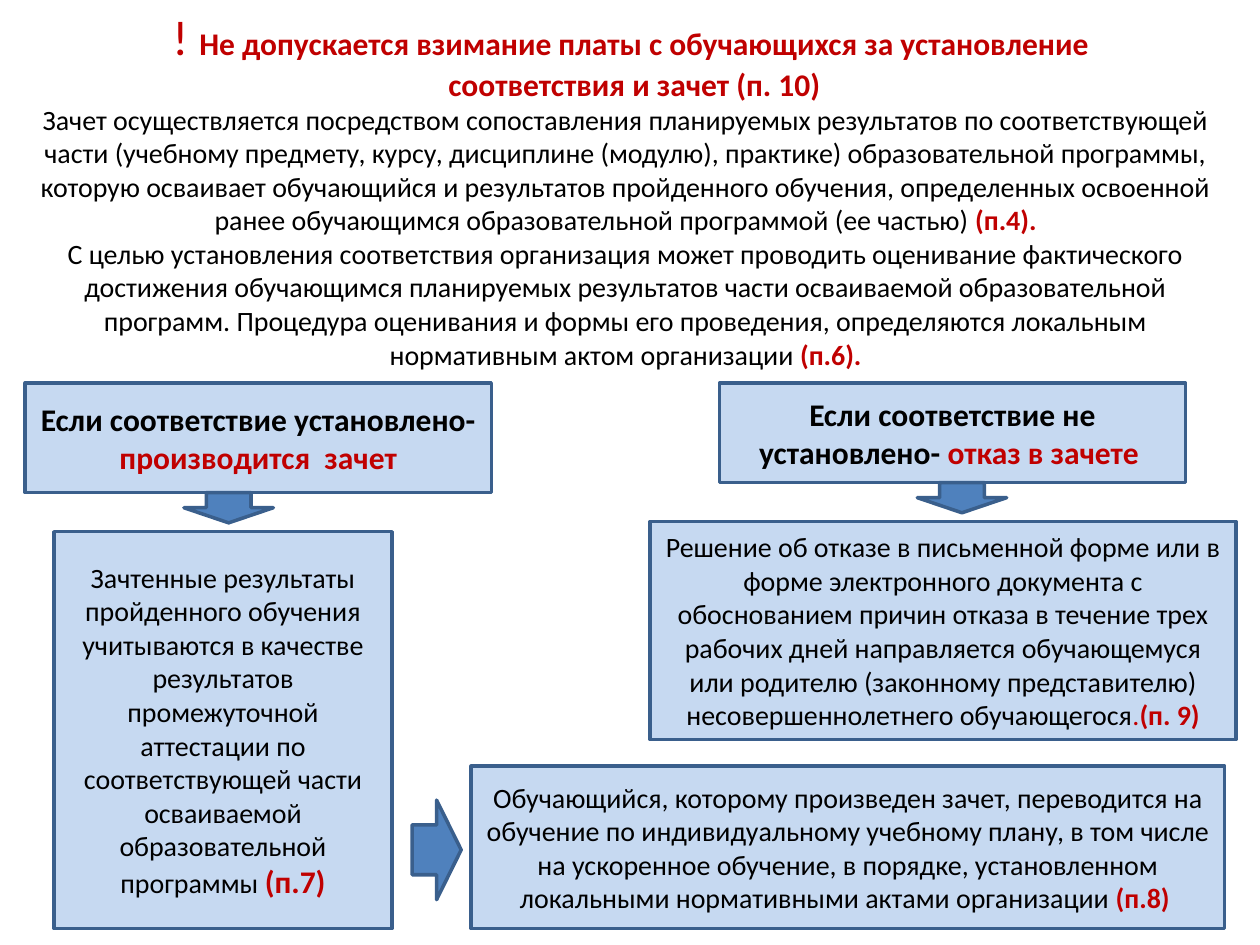
from pptx import Presentation
from pptx.dml.color import RGBColor
from pptx.enum.shapes import MSO_SHAPE as Preset
from pptx.enum.text import MSO_ANCHOR as Anchor, MSO_AUTO_SIZE as AutoSize, PP_ALIGN as Align
from pptx.oxml.ns import qn
from pptx.util import Inches, Pt
from lxml.etree import SubElement

BLACK, RED = "000000", "C00000"
PALE_BLUE, BLUE, OUTLINE = "C6D9F1", "4F81BD", "3A5F8C"
NORMAL = {"size": Pt(16), "bold": False, "color": BLACK}
NORMAL_RED = {**NORMAL, "color": RED}
CLAUSE = {**NORMAL_RED, "bold": True}
HEAD = {"size": Pt(18), "bold": True, "color": BLACK}
HEAD_RED = {**HEAD, "color": RED}
MARK = {"size": Pt(28), "bold": False, "color": RED}

WARNING = [
    [("! ", MARK), ("Не допускается взимание платы с обучающихся за установление ", HEAD_RED)],
    [("соответствия и зачет (п. 10)", HEAD_RED)],
]
PROCEDURE = [
    [("Зачет осуществляется посредством сопоставления планируемых результатов по "
      "соответствующей части (учебному предмету, курсу, дисциплине (модулю), практике) "
      "образовательной программы, которую осваивает обучающийся и результатов пройденного "
      "обучения, определенных освоенной ранее обучающимся образовательной программой "
      "(ее частью) ", NORMAL), ("(п.4).", CLAUSE)],
    [("С целью установления соответствия организация может проводить оценивание "
      "фактического достижения обучающимся планируемых результатов части осваиваемой "
      "образовательной программ. Процедура оценивания и формы его проведения, определяются "
      "локальным нормативным актом организации ", NORMAL), ("(п.6).", CLAUSE)],
]
BOXES = [
    ((0.2, 3.04, 3.7, 0.87),
     [("Если соответствие установлено- ", HEAD), ("производится  зачет", HEAD_RED)]),
    ((5.71, 3.04, 3.7, 0.79),
     [("Если соответствие не установлено- ", HEAD), ("отказ в зачете ", HEAD_RED)]),
    ((0.43, 4.22, 2.68, 3.15),
     [("Зачтенные результаты пройденного обучения учитываются в качестве результатов "
       "промежуточной аттестации по соответствующей части осваиваемой образовательной "
       "программы ", NORMAL), ("(п.7)", HEAD_RED)]),
    ((5.16, 4.14, 4.65, 1.73),
     [("Решение об отказе в письменной форме или в форме электронного документа с "
       "обоснованием причин отказа в течение трех рабочих дней направляется обучающемуся "
       "или родителю (законному представителю) несовершеннолетнего обучающегося", NORMAL),
      (".", NORMAL_RED), ("(п. 9)", CLAUSE)]),
    ((3.74, 6.08, 5.98, 1.29),
     [("Обучающийся, которому произведен зачет, переводится на обучение по индивидуальному "
       "учебному плану, в том числе на ускоренное обучение, в порядке, установленном "
       "локальными нормативными актами организации ", NORMAL), ("(п.8) ", CLAUSE)]),
]
ARROWS = [
    (Preset.DOWN_ARROW, (1.46, 3.91, 0.71, 0.24)),
    (Preset.DOWN_ARROW, (7.28, 3.83, 0.71, 0.24)),
    (Preset.RIGHT_ARROW, (3.27, 6.35, 0.39, 0.79)),
]


def rgb(color):
    return RGBColor.from_string(color)


def write(shape, paragraphs, anchor):
    frame = shape.text_frame
    layout = {"word_wrap": True, "auto_size": AutoSize.NONE, "vertical_anchor": anchor}
    for name, value in layout.items():
        setattr(frame, name, value)
    for index, runs in enumerate(paragraphs):
        paragraph = frame.paragraphs[0] if index == 0 else frame.add_paragraph()
        spacing = {"alignment": Align.CENTER, "space_before": Pt(0), "space_after": Pt(0)}
        for name, value in spacing.items():
            setattr(paragraph, name, value)
        properties = paragraph._p.get_or_add_pPr()
        properties.set("marL", "0")
        properties.set("indent", "0")
        SubElement(properties, qn("a:buNone"))
        for text, style in runs:
            run = paragraph.add_run()
            run.text = text
            run.font.name = "Calibri"
            run.font.size = style["size"]
            run.font.bold = style["bold"]
            run.font.color.rgb = rgb(style["color"])


def place(placeholder, area, paragraphs):
    for name, value in zip(("left", "top", "width", "height"), area):
        setattr(placeholder, name, Inches(value))
    write(placeholder, paragraphs, Anchor.TOP)


def draw(slide, preset, area, fill):
    shape = slide.shapes.add_shape(preset, *map(Inches, area))
    shape.shadow.inherit = False
    shape.fill.solid()
    shape.fill.fore_color.rgb = rgb(fill)
    shape.line.color.rgb = rgb(OUTLINE)
    shape.line.width = Pt(2)
    return shape


def main():
    deck = Presentation()
    deck.slide_width, deck.slide_height = Inches(10), Inches(7.5)
    slide = deck.slides.add_slide(deck.slide_layouts[1])
    place(slide.shapes.title, (0.35, 0, 9.37, 0.88), WARNING)
    place(slide.placeholders[1], (0.2, 0.76, 9.53, 2.56), PROCEDURE)
    for area, runs in BOXES:
        write(draw(slide, Preset.RECTANGLE, area, PALE_BLUE), [runs], Anchor.MIDDLE)
    for preset, area in ARROWS:
        draw(slide, preset, area, BLUE)
    deck.save("out.pptx")


if __name__ == "__main__":
    main()
